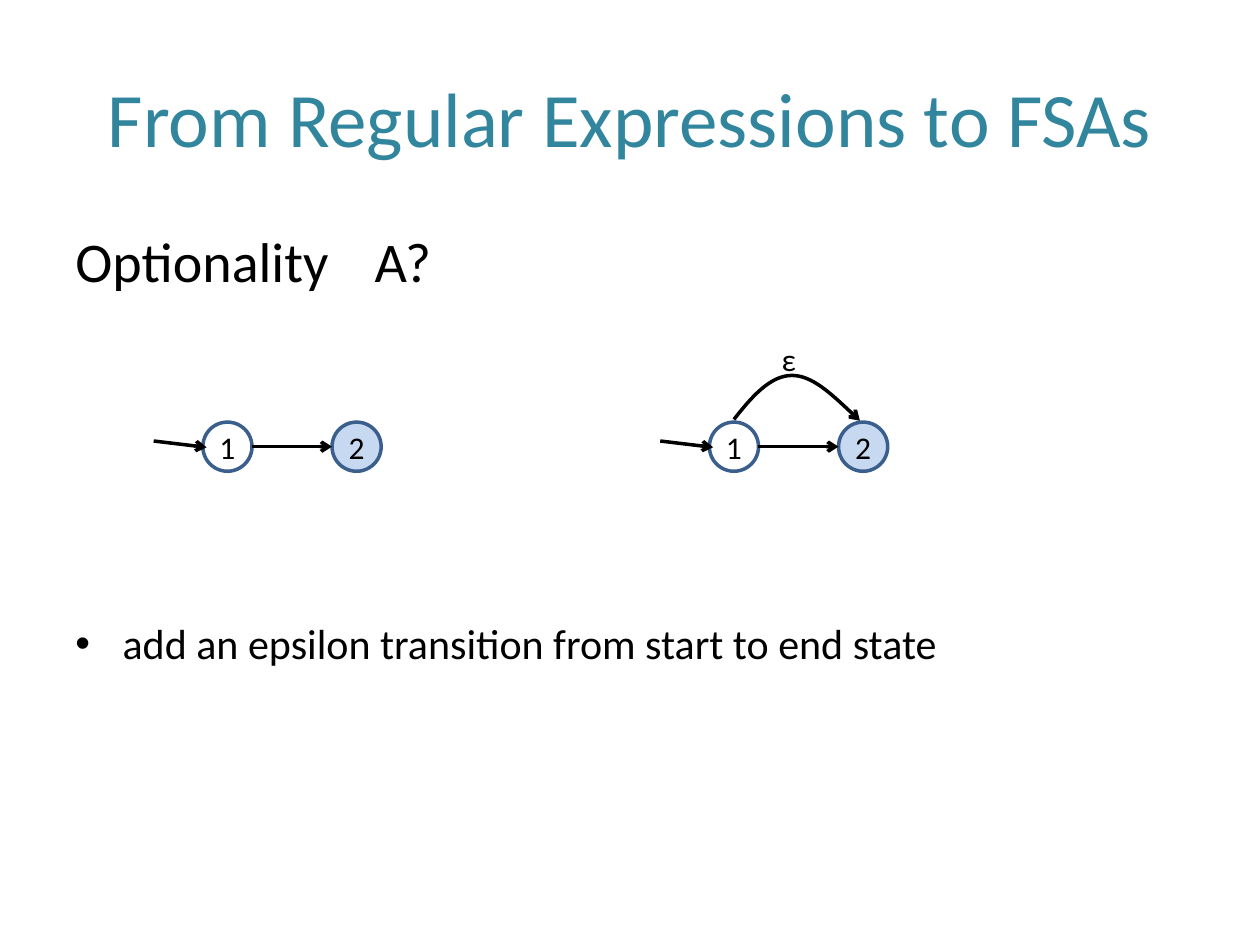
from dataclasses import dataclass
from typing import Optional

from lxml import etree
from pptx import Presentation
from pptx.dml.color import RGBColor
from pptx.enum.shapes import MSO_CONNECTOR, MSO_SHAPE
from pptx.enum.text import MSO_ANCHOR, PP_ALIGN
from pptx.oxml.ns import qn
from pptx.util import Emu, Inches, Pt

STRAIGHT = MSO_CONNECTOR.STRAIGHT
OVAL = MSO_SHAPE.OVAL
MIDDLE = MSO_ANCHOR.MIDDLE
TOP = MSO_ANCHOR.TOP
CENTER = PP_ALIGN.CENTER
LEFT = PP_ALIGN.LEFT

COLUMNS, ROWS = 100, 75
CELL = Inches(10) // COLUMNS


@dataclass(frozen=True)
class Theme:
    font: str = "Calibri"
    title: RGBColor = RGBColor(0x31, 0x85, 0x9C)
    ink: RGBColor = RGBColor(0, 0, 0)
    state_line: RGBColor = RGBColor(0x3A, 0x5F, 0x8C)
    final_fill: RGBColor = RGBColor(0xC6, 0xD9, 0xF1)
    title_size: Pt = Pt(44)
    heading_size: Pt = Pt(32)
    body_size: Pt = Pt(24)
    label_size: Pt = Pt(18)
    line_width: Pt = Pt(2)


@dataclass(frozen=True)
class Automaton:
    """Two-state machine; left is the column where its start arrow begins."""
    left: float
    skip_label: Optional[str] = None


THEME = Theme()
AUTOMATA = (Automaton(12.2), Automaton(52.4, skip_label="ε"))
STATE_SIZE = 3.9
STATE_TOP = 33.5
STATE_OFFSETS = (3.9, 14.15)
HANGING_INDENT = 3.75


def grid(*cells: float) -> list[Emu]:
    return [Emu(round(cell * CELL)) for cell in cells]


def style(paragraph, size: Pt, color: RGBColor, align=LEFT) -> None:
    paragraph.alignment = align
    paragraph.font.name = THEME.font
    paragraph.font.size = size
    paragraph.font.color.rgb = color


def add_text(slide, box: tuple, text: str, size: Pt, color: RGBColor,
             align=LEFT, anchor=TOP):
    frame = slide.shapes.add_textbox(*grid(*box)).text_frame
    frame.word_wrap = True
    frame.vertical_anchor = anchor
    frame.text = text
    for paragraph in frame.paragraphs:
        style(paragraph, size, color, align)
    return frame


def hang(paragraph, bullet: Optional[str] = None) -> None:
    """Give a paragraph a hanging indent and, if asked, a bullet."""
    properties = paragraph._p.get_or_add_pPr()
    indent, = grid(HANGING_INDENT)
    properties.set("marL", str(indent))
    properties.set("indent", str(-indent))
    if bullet:
        etree.SubElement(properties, qn("a:buFont")).set("typeface", "Arial")
        etree.SubElement(properties, qn("a:buChar")).set("char", bullet)
        # Bullet marks come before the default run properties.
        run_defaults = properties.find(qn("a:defRPr"))
        if run_defaults is not None:
            properties.append(run_defaults)


def make_arrow(shape) -> None:
    shape.line.color.rgb = THEME.ink
    shape.line.width = THEME.line_width
    etree.SubElement(shape.line._get_or_add_ln(), qn("a:tailEnd")).set("type", "arrow")


def add_arrow(slide, start: tuple, end: tuple) -> None:
    arrow = slide.shapes.add_connector(STRAIGHT, *grid(*start, *end))
    make_arrow(arrow)
    etree.SubElement(arrow._element.spPr, qn("a:effectLst"))


def add_curved_arrow(slide, start: tuple, controls: list[tuple]) -> None:
    """Draw cubic curves; each three controls make one curve."""
    builder = slide.shapes.build_freeform(*grid(*start))
    builder.add_line_segments([grid(*point) for point in controls], close=False)
    curve = builder.convert_to_shape()
    segments = list(curve._element.iter(qn("a:lnTo")))
    for first in range(0, len(segments), 3):
        bezier = etree.SubElement(segments[first].getparent(), qn("a:cubicBezTo"))
        for segment in segments[first:first + 3]:
            bezier.append(segment[0])
            segment.getparent().remove(segment)
    curve.fill.background()
    curve.shadow.inherit = False
    make_arrow(curve)


def add_state(slide, left: float, name: str, final: bool) -> None:
    state = slide.shapes.add_shape(OVAL, *grid(left, STATE_TOP, STATE_SIZE, STATE_SIZE))
    state.shadow.inherit = False
    state.line.color.rgb = THEME.state_line
    state.line.width = THEME.line_width
    if final:
        state.fill.solid()
        state.fill.fore_color.rgb = THEME.final_fill
    else:
        state.fill.background()
    frame = state.text_frame
    frame.margin_left = frame.margin_right = frame.margin_top = frame.margin_bottom = 0
    frame.word_wrap = False
    frame.vertical_anchor = MIDDLE
    frame.text = name
    style(frame.paragraphs[0], THEME.label_size, THEME.ink, CENTER)


def add_automaton(slide, automaton: Automaton) -> None:
    first, last = (automaton.left + offset for offset in STATE_OFFSETS)
    middle = STATE_TOP + STATE_SIZE / 2
    add_state(slide, first, "1", final=False)
    add_state(slide, last, "2", final=True)
    add_arrow(slide, (automaton.left, 35), (first + 0.3, 35.5))
    add_arrow(slide, (first + STATE_SIZE, middle), (last, middle))
    if automaton.skip_label:
        start = first + STATE_SIZE / 2
        rise = [(1.4, 31.5), (2.9, 29.8), (4.6, 29.8)]
        fall = [(6.2, 29.8), (8.1, 31.6), (10, 33.4)]
        add_curved_arrow(slide, (start, 33.3), [(start + x, y) for x, y in rise + fall])
        add_text(slide, (start + 2.8, 26.5, 3.2, 4), automaton.skip_label,
                 THEME.label_size, THEME.ink)


def main() -> None:
    presentation = Presentation()
    presentation.slide_width, presentation.slide_height = grid(COLUMNS, ROWS)
    slide = presentation.slides.add_slide(presentation.slide_layouts[6])

    add_text(slide, (5, 3, 90, 12.5), "From Regular Expressions to FSAs",
             THEME.title_size, THEME.title, CENTER, MIDDLE)
    body = add_text(slide, (5, 17.5, 90, 49.5),
                    "Optionality\tA?\nadd an epsilon transition from start to end state",
                    THEME.heading_size, THEME.ink)
    operator, rule = body.paragraphs
    hang(operator)
    rule.font.size = THEME.body_size
    rule.space_before = Pt(185)
    hang(rule, "•")

    for automaton in AUTOMATA:
        add_automaton(slide, automaton)
    presentation.save("out.pptx")


if __name__ == "__main__":
    main()
